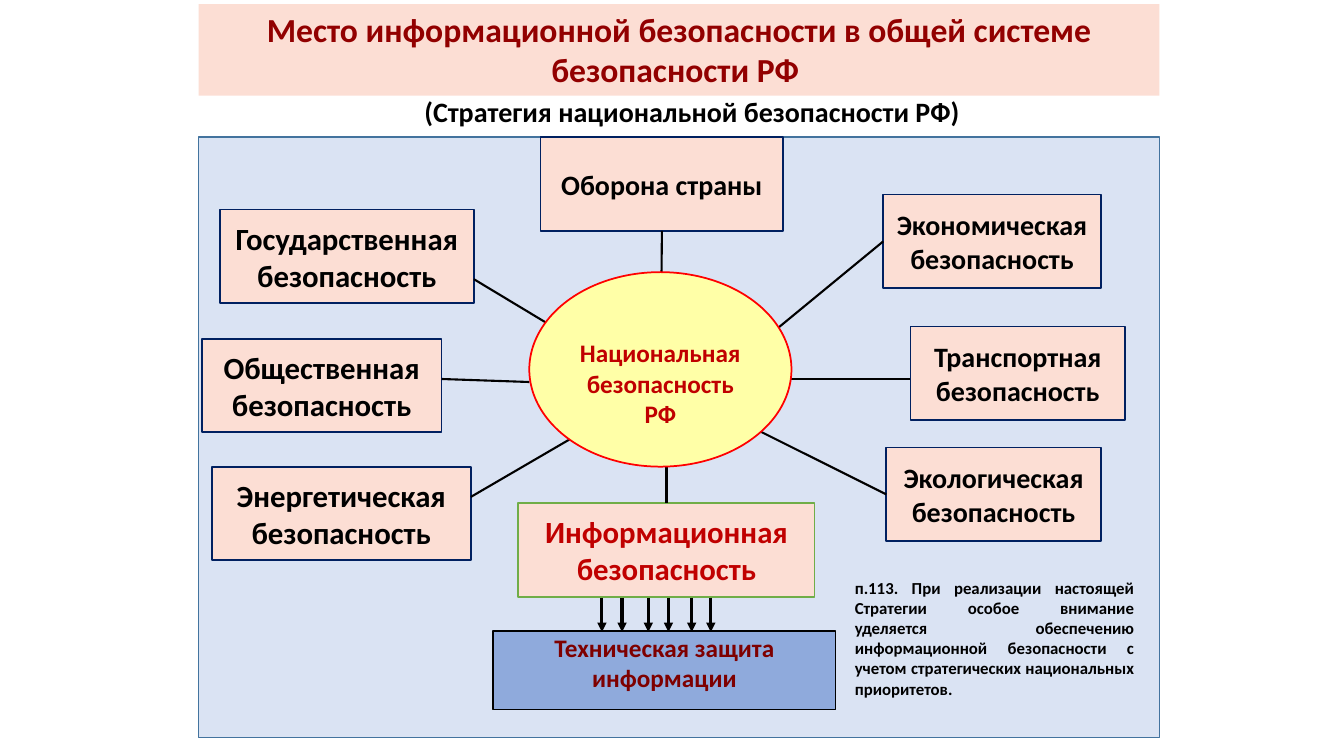
from lxml.etree import SubElement
from pptx import Presentation
from pptx.dml.color import RGBColor
from pptx.enum.shapes import MSO_CONNECTOR, MSO_SHAPE
from pptx.enum.text import MSO_ANCHOR, PP_ALIGN
from pptx.oxml.ns import qn
from pptx.util import Pt

PX = 9144  # 100 px to the inch
FONT = "Calibri"
COLORS = {
    "panel": "DAE3F3", "panel_edge": "43739E", "peach": "FCDED4",
    "navy": "002060", "green": "70AD47", "yellow": "FFFFA7",
    "red": "FF0000", "crimson": "C00000", "maroon": "7E0000",
    "title": "920000", "steel": "8FAADC", "black": "000000",
}

TITLE = "Место информационной безопасности в общей системе безопасности РФ "
SUBTITLE = "(Стратегия национальной безопасности РФ)"
CENTER = "Национальная\vбезопасность\vРФ"
PROTECTION = "Техническая защита\vинформации"
NOTE = ("п.113. При реализации настоящей Стратегии особое внимание уделяется "
        "обеспечению информационной безопасности с учетом стратегических "
        "национальных приоритетов.")

BRANCH_HEIGHT = 93
# text, left, top, width, size, edge, font colour
BRANCHES = [
    ("Оборона страны", 536, 136, 241, 20, "navy", "black"),
    ("Государственная безопасность", 218, 208, 252, 22, "navy", "black"),
    ("Экономическая безопасность", 876, 193, 216, 20, "navy", "black"),
    ("Энергетическая безопасность", 210, 463, 257, 22, "navy", "black"),
    ("Экологическая безопасность", 879, 444, 213, 20, "navy", "black"),
    ("Информационная безопасность", 514, 499, 294, 22, "green", "crimson"),
    ("Транспортная безопасность", 903, 324, 213, 20, "navy", "black"),
    ("Общественная безопасность", 200, 336, 238, 22, "navy", "black"),
]
# from, to, width, joined branch, its side
TOP, LEFT, BOTTOM = 0, 1, 2
SPOKES = [
    ((656, 229), (656, 284), 1.5, "Оборона страны", BOTTOM),
    ((470, 277), (568, 336), 1.5, None, None),
    ((876, 239), (766, 330), 1.5, "Экономическая безопасность", LEFT),
    ((467, 493), (582, 426), 1.5, None, None),
    ((879, 490), (738, 420), 1.5, "Экологическая безопасность", LEFT),
    ((661, 499), (661, 449), 2.25, "Информационная безопасность", TOP),
    ((903, 376), (784, 376), 1.5, None, None),
    ((438, 376), (525, 379), 1.5, None, None),
]
ARROW_XS = [597, 617, 643, 663, 686, 705]
ARROW_TOP, ARROW_BOTTOM = 593, 627

TIGHT = (2, 1, 2, 1)
NORMAL = (10, 5, 10, 5)

deck = Presentation()
deck.slide_width, deck.slide_height = 1333 * PX, 750 * PX
page = deck.slides.add_slide(deck.slide_layouts[6])


def color(name):
    return RGBColor.from_string(COLORS[name])


def write(box, text, size, font_color, align=PP_ALIGN.CENTER, insets=NORMAL,
          anchor=MSO_ANCHOR.TOP, wrap=True, before=0):
    frame = box.text_frame
    left, top, right, bottom = (inset * PX for inset in insets)
    frame_format = {
        "margin_left": left, "margin_top": top, "margin_right": right,
        "margin_bottom": bottom, "vertical_anchor": anchor, "word_wrap": wrap,
    }
    for name, value in frame_format.items():
        setattr(frame, name, value)
    para = frame.paragraphs[0]
    para.text = text
    para.alignment = align
    para.space_before = Pt(before)
    for span in para.runs:
        for name, value in {"name": FONT, "size": Pt(size), "bold": True}.items():
            setattr(span.font, name, value)
        span.font.color.rgb = color(font_color)


def add_box(bounds, fill, edge=None, weight=1.25, kind=MSO_SHAPE.RECTANGLE):
    box = page.shapes.add_shape(kind, *(length * PX for length in bounds))
    box.shadow.inherit = False
    box.fill.solid()
    box.fill.fore_color.rgb = color(fill)
    if edge:
        box.line.color.rgb = color(edge)
        box.line.width = Pt(weight)
    else:
        box.line.fill.background()
    return box


def add_text(bounds, *args, **options):
    write(page.shapes.add_textbox(*(length * PX for length in bounds)), *args, **options)


def add_line(start, end, weight, arrow=False):
    line = page.shapes.add_connector(
        MSO_CONNECTOR.STRAIGHT, *(length * PX for length in start + end))
    line.line.color.rgb = color("black")
    line.line.width = Pt(weight)
    if arrow:
        SubElement(line.line._get_or_add_ln(), qn("a:tailEnd"), type="triangle")
    SubElement(line._element.spPr, qn("a:effectLst"))
    return line


add_box((197, 136, 953, 596), "panel", "panel_edge", 1)

boxes = {}
for text, left, top, width, size, edge, font_color in BRANCHES:
    boxes[text] = add_box((left, top, width, BRANCH_HEIGHT), "peach", edge)
    write(boxes[text], text, size, font_color, insets=TIGHT,
          anchor=MSO_ANCHOR.MIDDLE, before=6)

for start, end, weight, branch, side in SPOKES:
    spoke = add_line(start, end, weight)
    if branch:
        spoke.begin_connect(boxes[branch], side)

center = add_box((525, 270, 260, 193), "yellow", "red", kind=MSO_SHAPE.OVAL)
write(center, CENTER, 18, "crimson", insets=(0, 32, 0, 5),
      anchor=MSO_ANCHOR.MIDDLE, wrap=False)

protection = add_box((489, 626, 340, 78), "steel", "black", 0.75)
write(protection, PROTECTION, 18, "maroon", insets=TIGHT)
for x in ARROW_XS:
    add_line((x, ARROW_TOP), (x, ARROW_BOTTOM), 2.25, arrow=True)

add_text((411, 89, 555, 44), SUBTITLE, 20, "black", align=PP_ALIGN.LEFT, wrap=False)
add_text((838, 568, 297, 131), NOTE, 12, "black", align=PP_ALIGN.JUSTIFY)
write(add_box((197, 4, 953, 91), "peach"), TITLE, 24, "title")

deck.save("out.pptx")
